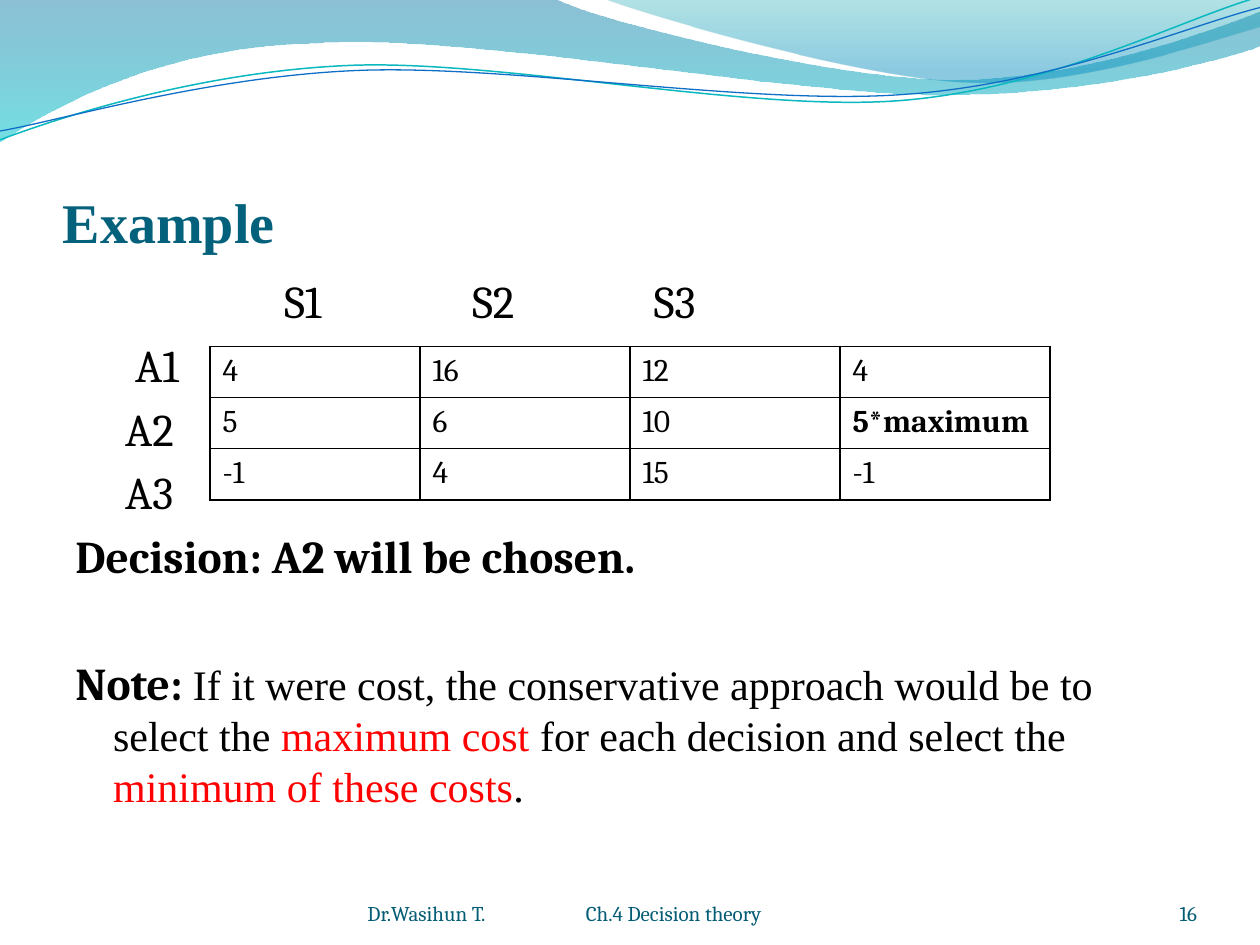
from dataclasses import dataclass

from lxml import etree
from pptx import Presentation
from pptx.dml.color import RGBColor
from pptx.enum.text import MSO_ANCHOR, PP_ALIGN
from pptx.oxml.ns import qn
from pptx.util import Inches, Pt

TOP, BOTTOM = MSO_ANCHOR.TOP, MSO_ANCHOR.BOTTOM
LEFT, RIGHT = PP_ALIGN.LEFT, PP_ALIGN.RIGHT
COLS, ROWS = 120, 90


@dataclass(frozen=True)
class Theme:
    """Colours, fonts and type sizes of the slide."""
    ink: str = "000000"
    title: str = "04617B"
    footer: str = "045D75"
    accent: str = "FF0000"
    teal: str = "0AB8BF"
    blue: str = "0F6FC6"
    wave: tuple = ((0, "0074A1", 45), (1, "00C6CF", 55))
    crest: tuple = ((0, "00A1A9", 30), (0.8, "008BBF", 45))
    serif: str = "Cambria"
    roman: str = "Times New Roman"
    heading: int = 32
    body: int = 26
    note: int = 24
    cell: int = 18
    small: int = 12


class Deck:
    """Holds the theme and the current slide, and draws each kind of element."""

    def __init__(self, theme):
        """Start a one-slide presentation on the blank layout."""
        self.theme = theme
        self.prs = Presentation()
        self.prs.slide_width, self.prs.slide_height = Inches(10), Inches(7.5)
        self.s = self.prs.slides.add_slide(self.prs.slide_layouts[6])

    def x(self, cols):
        """Turn grid columns into a length."""
        return round(cols * self.prs.slide_width / COLS)

    def y(self, rows):
        """Turn grid rows into a length."""
        return round(rows * self.prs.slide_height / ROWS)

    def freeform(self, segments, closed):
        """Draw lines (2 numbers) and curves (6), in tenths of the slide's width."""
        unit = self.prs.slide_width / 10
        ends = [[(seg[i] * unit, seg[i + 1] * unit) for i in range(0, len(seg), 2)]
                for seg in segments]
        builder = self.s.shapes.build_freeform(*ends[0][0], scale=1.0)
        builder.add_line_segments([pt for seg in ends[1:] for pt in seg], close=closed)
        sp = builder.convert_to_shape()
        sp.shadow.inherit = False
        lines = iter(list(sp.element.spPr.iter(qn("a:lnTo"))))
        for seg in ends[1:]:
            steps = [next(lines) for _ in seg]
            if len(steps) == 3:
                curve = etree.Element(qn("a:cubicBezTo"))
                steps[0].addprevious(curve)
                for step in steps:
                    curve.append(step[0])
                    step.getparent().remove(step)
        return sp

    def band(self, segments, stops):
        """Draw a filled wave with a translucent vertical gradient."""
        sp = self.freeform(segments, True)
        sp.line.fill.background()
        sp.fill.gradient()
        sp.fill.gradient_angle = 270
        for stop, (position, color, _) in zip(sp.fill.gradient_stops, stops):
            stop.position = position
            stop.color.rgb = RGBColor.from_string(color)
        for clr, (_, _, opacity) in zip(sp.element.spPr.iter(qn("a:srgbClr")), stops):
            etree.SubElement(clr, qn("a:alpha"), val=str(opacity * 1000))

    def strand(self, segments, color, width):
        """Draw a thin wavy line."""
        sp = self.freeform(segments, False)
        sp.fill.background()
        sp.line.color.rgb = RGBColor.from_string(color)
        sp.line.width = Pt(width)

    def runs(self, p, runs, size, font=None, color=None, bold=False):
        """Add runs given as text, or as a tuple of text and style changes."""
        base = dict(size=size, font=font or self.theme.serif,
                    color=color or self.theme.ink, bold=bold)
        for item in runs:
            text, changes = (item, {}) if isinstance(item, str) else item
            style = {**base, **changes}
            r = p.add_run()
            r.text = text
            r.font.size, r.font.name = Pt(style["size"]), style["font"]
            r.font.bold = style["bold"]
            r.font.color.rgb = RGBColor.from_string(style["color"])

    def layout(self, p, margin=0, hang=0, tabs=()):
        """Set a paragraph's left margin, first-line indent and tab stops in columns."""
        pPr = p._p.get_or_add_pPr()
        if margin:
            pPr.set("marL", str(self.x(margin)))
            pPr.set("indent", str(self.x(hang)))
        if tabs:
            tab_list = etree.SubElement(pPr, qn("a:tabLst"))
            for tab in tabs:
                etree.SubElement(tab_list, qn("a:tab"), pos=str(self.x(tab)), algn="l")

    def text(self, box, paragraphs, anchor=TOP, insets=(0, 0, 0, 0), align=LEFT, **style):
        """Add a text box; each paragraph is its runs, space before and layout."""
        left, top, width, height = box
        tf = self.s.shapes.add_textbox(self.x(left), self.y(top),
                                       self.x(width), self.y(height)).text_frame
        tf.word_wrap, tf.vertical_anchor = True, anchor
        tf.margin_left, tf.margin_top, tf.margin_right, tf.margin_bottom = map(Inches, insets)
        for i, (runs, before, form) in enumerate(paragraphs):
            p = tf.add_paragraph() if i else tf.paragraphs[0]
            p.alignment, p.space_before = align, Pt(before)
            self.layout(p, **form)
            self.runs(p, runs, **style)

    def border(self, cell):
        """Give a cell a thin line on all four sides."""
        tcPr = cell._tc.get_or_add_tcPr()
        for i, side in enumerate(("lnL", "lnR", "lnT", "lnB")):
            ln = etree.Element(qn(f"a:{side}"), w=str(Pt(1)))
            fill = etree.SubElement(ln, qn("a:solidFill"))
            etree.SubElement(fill, qn("a:srgbClr"), val=self.theme.ink)
            tcPr.insert(i, ln)

    def table(self, left, top, col, row, values, strong):
        """Add a plain bordered table with one bold value."""
        n_rows, n_cols = len(values), len(values[0])
        table = self.s.shapes.add_table(n_rows, n_cols, self.x(left), self.y(top),
                                        self.x(col * n_cols), self.y(row * n_rows)).table
        table.first_row = table.horz_banding = False
        for i, line in enumerate(values):
            for j, value in enumerate(line):
                cell = table.cell(i, j)
                cell.fill.background()
                self.border(cell)
                self.runs(cell.text_frame.paragraphs[0], [value], self.theme.cell,
                          bold=value == strong)


def main():
    """Build the slide and save it."""
    th = Theme()
    d = Deck(th)
    d.band([(0, 0), (4.4, -0.01), (4.76, 0.17, 6.64, 0.63, 7.58, 0.63),
            (8.53, 0.63, 9.58, 0.26, 10, 0.09), (10.01, 0.36),
            (9.83, 0.44, 8.7, 0.76, 7.46, 0.75), (6.22, 0.75, 3.82, 0.28, 2.57, 0.34),
            (1.29, 0.36, 0.46, 0.83, -0.01, 1.13)], th.wave)
    d.band([(4.79, -0.01), (5.09, 0.11, 6.82, 0.62, 7.69, 0.65),
            (8.56, 0.69, 9.61, 0.32, 10, 0.21), (10, 0)], th.crest)
    d.strand([(0, 1.11), (0.48, 0.93, 1.58, 0.57, 2.77, 0.52),
              (3.95, 0.47, 5.93, 0.89, 7.13, 0.8),
              (8.33, 0.71, 9.38, 0.15, 9.98, -0.02)], th.teal, 0.85)
    d.strand([(0, 1.04), (0.47, 0.96, 1.64, 0.61, 2.83, 0.56),
              (4.03, 0.51, 5.97, 0.84, 7.17, 0.75),
              (8.36, 0.67, 9.41, 0.21, 10, 0.06)], th.blue, 0.75)

    d.text((6, 9.25, 108, 15), [(["Example"], 0, {})], BOTTOM, (0, 0.05, 0, 0),
           size=th.heading, font=th.roman, color=th.title, bold=True)

    gap, blank_line = 5.2, 36.4
    bold, roman = {"bold": True}, {"size": th.note, "font": th.roman}
    red = {**roman, "color": th.accent}
    hanging = {"margin": 3.6, "hang": -3.6}
    labels = [([name], gap, {"margin": indent})
              for name, indent in (("A1", 5.7), ("A2", 4.75), ("A3", 4.75))]
    note = [("Note: ", bold),
            ("If it were cost, the conservative approach would be to select the ", roman),
            ("maximum cost ", red), ("for each decision and select the ", roman),
            ("minimum of these costs", red), (".", roman)]
    d.text((6, 25.44, 108, 57.6),
           [(["\tS1\tS2\tS3"], 0, {"tabs": (19.9, 37.8, 55.1)}), *labels,
            ([("Decision: A2 will be chosen.", bold)], gap, hanging),
            (note, gap + blank_line, hanging)],
           insets=(0.1, 0.05, 0.1, 0.05), size=th.body)

    d.table(20, 33, 20, 4.87, [("4", "16", "12", "4"), ("5", "6", "10", "5*maximum"),
                               ("-1", "4", "15", "-1")], "5*maximum")

    small = dict(anchor=BOTTOM, size=th.small, color=th.footer)
    d.text((104, 83.4, 10, 4.8), [(["16"], 0, {})], align=RIGHT, **small)
    d.text((35, 83.4, 44, 4.8),
           [(["Dr.Wasihun T.\tCh.4 Decision theory"], 0, {"tabs": (20.8,)})], **small)
    d.prs.save("out.pptx")


if __name__ == "__main__":
    main()
